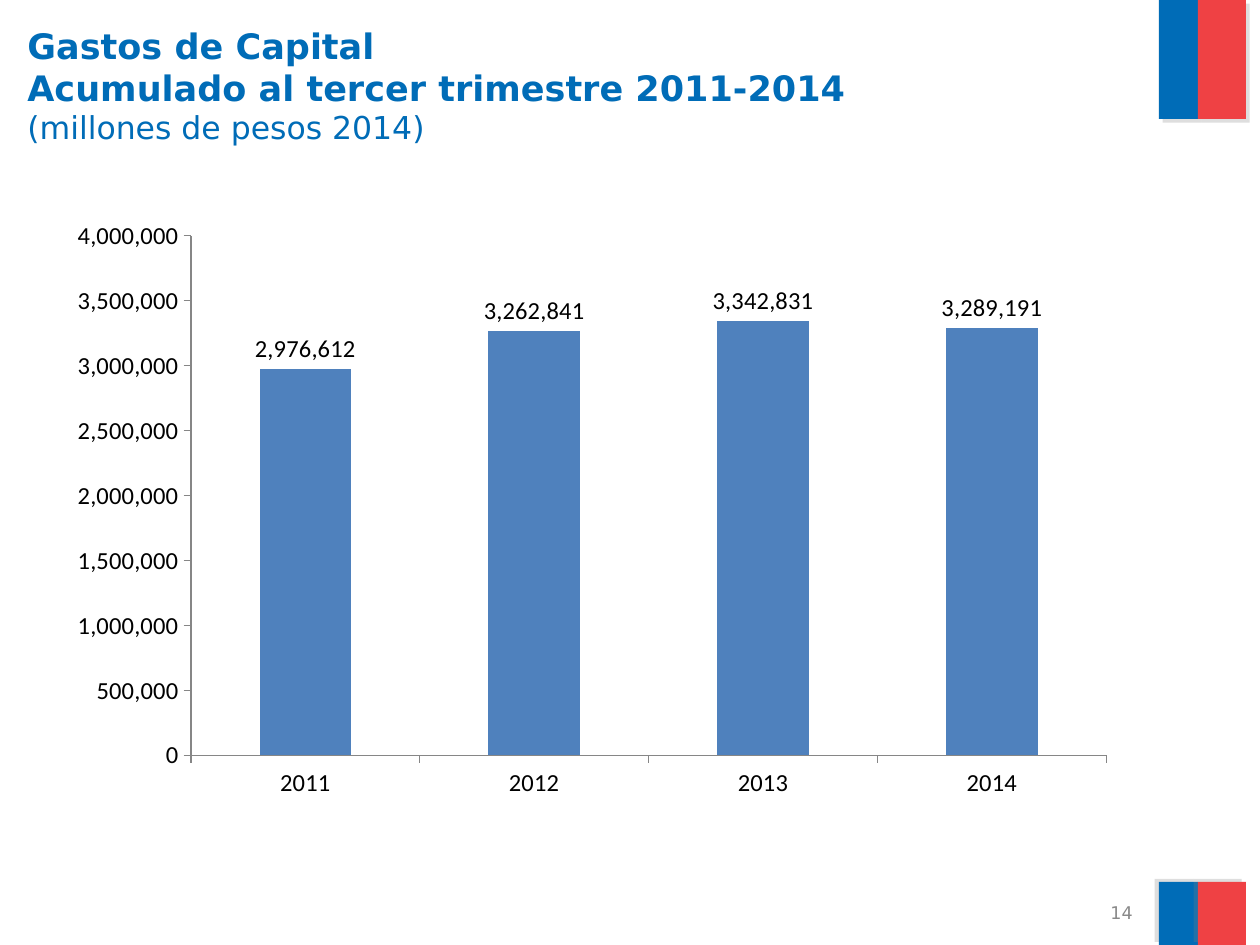
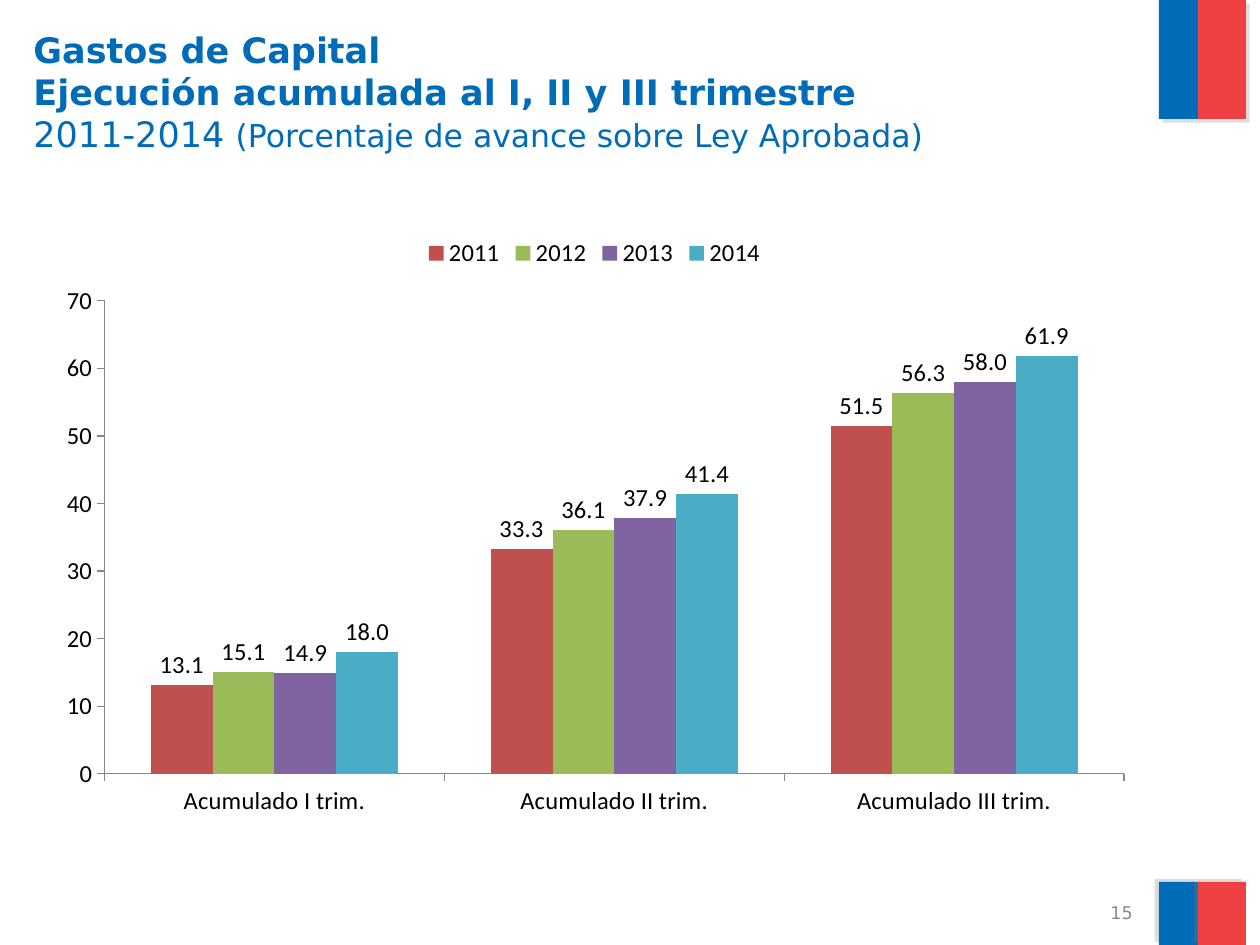
"""Build two slides on capital spending, each with a title, flag bands and a column chart."""
from lxml import etree
from pptx import Presentation
from pptx.chart.data import CategoryChartData
from pptx.dml.color import RGBColor
from pptx.enum.chart import XL_CHART_TYPE, XL_LABEL_POSITION, XL_LEGEND_POSITION, XL_TICK_MARK
from pptx.enum.shapes import MSO_SHAPE
from pptx.enum.text import MSO_ANCHOR, PP_ALIGN
from pptx.oxml import parse_xml
from pptx.oxml.ns import nsdecls, qn
from pptx.util import Pt

RECT = MSO_SHAPE.RECTANGLE
COLUMNS = XL_CHART_TYPE.COLUMN_CLUSTERED
OUTSIDE = XL_LABEL_POSITION.OUTSIDE_END
LEGEND_TOP = XL_LEGEND_POSITION.TOP
CROSS, NO_TICK = XL_TICK_MARK.CROSS, XL_TICK_MARK.NONE
LEFT, RIGHT = PP_ALIGN.LEFT, PP_ALIGN.RIGHT
TOP, MIDDLE = MSO_ANCHOR.TOP, MSO_ANCHOR.MIDDLE

PX = 914400 / 126
TITLE_FONT, CHART_FONT = "DejaVu Sans", "Calibri"
COLORS = {
    "blue": "006CB7", "red": "EF4144", "gray": "898989", "axis": "868686", "black": "000000",
    "steel": "4F81BD", "brick": "C0504D", "green": "9BBB59", "purple": "8064A2", "aqua": "4BACC6",
}
RGB = {name: RGBColor.from_string(value) for name, value in COLORS.items()}


def px(*lengths):
    return [round(n * PX) for n in lengths]


def add_text(slide, box, paragraphs, color="blue", align=LEFT, anchor=TOP):
    tf = slide.shapes.add_textbox(*px(*box)).text_frame
    tf.word_wrap = True
    tf.vertical_anchor = anchor
    for i, runs in enumerate(paragraphs):
        p = tf.add_paragraph() if i else tf.paragraphs[0]
        p.alignment = align
        for text, size, bold in runs:
            r = p.add_run()
            r.text = text
            r.font.name, r.font.size, r.font.bold = TITLE_FONT, Pt(size), bold
            r.font.color.rgb = RGB[color]


BANDS = [
    (1159, 0, 39, 119, "blue", 45),
    (1198, 0, 48, 119, "red", 45),
    (1159, 882, 39, 63, "blue", 215),
    (1198, 882, 48, 63, "red", 215),
]

SLIDES = [
    {
        "number": "14",
        "title_at": (15, 18),
        "title": [
            [("Gastos de Capital", 20, True)],
            [("Acumulado al tercer trimestre 2011-2014", 20, True)],
            [("(millones de pesos 2014)", 18, False)],
        ],
        "chart_box": (21, 204, 1126, 624),
        "plot": (0.151, 0.051, 0.813, 0.833),
        "categories": ["2011", "2012", "2013", "2014"],
        "series": [("Gastos de Capital", [2976612, 3262841, 3342831, 3289191], "steel")],
        "axis": (4000000, 500000, "#,##0"),
        "label_format": "#,##0",
    },
    {
        "number": "15",
        "title_at": (21, 22),
        "title": [
            [("Gastos de Capital", 20, True)],
            [("Ejecución acumulada al I, II y III trimestre", 20, True)],
            [("2011-2014 ", 20, False), ("(Porcentaje de avance sobre Ley Aprobada)", 18, False)],
        ],
        "chart_box": (44, 224, 1101, 605),
        "plot": (0.055, 0.127, 0.926, 0.782),
        "categories": ["Acumulado I trim.", "Acumulado II trim.", "Acumulado III trim."],
        "series": [
            ("2011", [13.1, 33.3, 51.5], "brick"),
            ("2012", [15.1, 36.1, 56.3], "green"),
            ("2013", [14.9, 37.9, 58.0], "purple"),
            ("2014", [18.0, 41.4, 61.9], "aqua"),
        ],
        "axis": (70, 10, "0"),
        "label_format": "0.0",
    },
]

prs = Presentation()
prs.slide_width, prs.slide_height = px(1260, 945)

for content in SLIDES:
    s = prs.slides.add_slide(prs.slide_layouts[6])

    for x, y, w, h, color, angle in BANDS:
        sp = s.shapes.add_shape(RECT, *px(x, y, w, h))
        sp.fill.solid()
        sp.fill.fore_color.rgb = RGB[color]
        sp.line.fill.background()
        sp.shadow.inherit = False
        effects = sp._element.spPr.find(qn("a:effectLst"))
        effects.append(parse_xml(
            f'<a:outerShdw {nsdecls("a")} blurRad="0" dist="{Pt(3)}" dir="{angle * 60000}" '
            'algn="ctr" rotWithShape="0"><a:srgbClr val="808080"><a:alpha val="25000"/>'
            '</a:srgbClr></a:outerShdw>'))

    add_text(s, (*content["title_at"], 1125, 158), content["title"])
    add_text(s, (852, 900, 293, 26), [[(content["number"], 10, False)]],
             color="gray", align=RIGHT, anchor=MIDDLE)

    data = CategoryChartData()
    data.categories = content["categories"]
    for name, values, color in content["series"]:
        data.add_series(name, values)
    chart = s.shapes.add_chart(COLUMNS, *px(*content["chart_box"]), data).chart
    chart.has_title = False
    chart.font.name, chart.font.size = CHART_FONT, Pt(14)
    chart.font.color.rgb = RGB["black"]
    chart.has_legend = len(content["series"]) > 1
    if chart.has_legend:
        chart.legend.position = LEGEND_TOP
        chart.legend.include_in_layout = False

    plot = chart.plots[0]
    plot.gap_width, plot.overlap, plot.vary_by_categories = 150, 0, False
    plot.has_data_labels = True
    labels = plot.data_labels
    labels.show_value, labels.position = True, OUTSIDE
    labels.number_format, labels.number_format_is_linked = content["label_format"], False
    for series, (name, values, color) in zip(plot.series, content["series"]):
        series.format.fill.solid()
        series.format.fill.fore_color.rgb = RGB[color]
        series.invert_if_negative = False

    for axis in (chart.category_axis, chart.value_axis):
        axis.has_major_gridlines = False
        axis.major_tick_mark, axis.minor_tick_mark = XL_TICK_MARK.OUTSIDE, NO_TICK
        axis.format.line.color.rgb = RGB["axis"]
    axis.minimum_scale = 0
    axis.maximum_scale, axis.major_unit, axis.tick_labels.number_format = content["axis"]
    axis.tick_labels.number_format_is_linked = False

    area = chart._chartSpace.chart.plotArea
    for old in area.findall(qn("c:layout")):
        area.remove(old)
    layout = etree.Element(qn("c:layout"))
    manual = etree.SubElement(layout, qn("c:manualLayout"))
    settings = [("layoutTarget", "inner"), ("xMode", "edge"), ("yMode", "edge")]
    for tag, value in settings + list(zip("xywh", content["plot"])):
        etree.SubElement(manual, qn(f"c:{tag}")).set("val", str(value))
    area.insert(0, layout)

prs.save("out.pptx")
